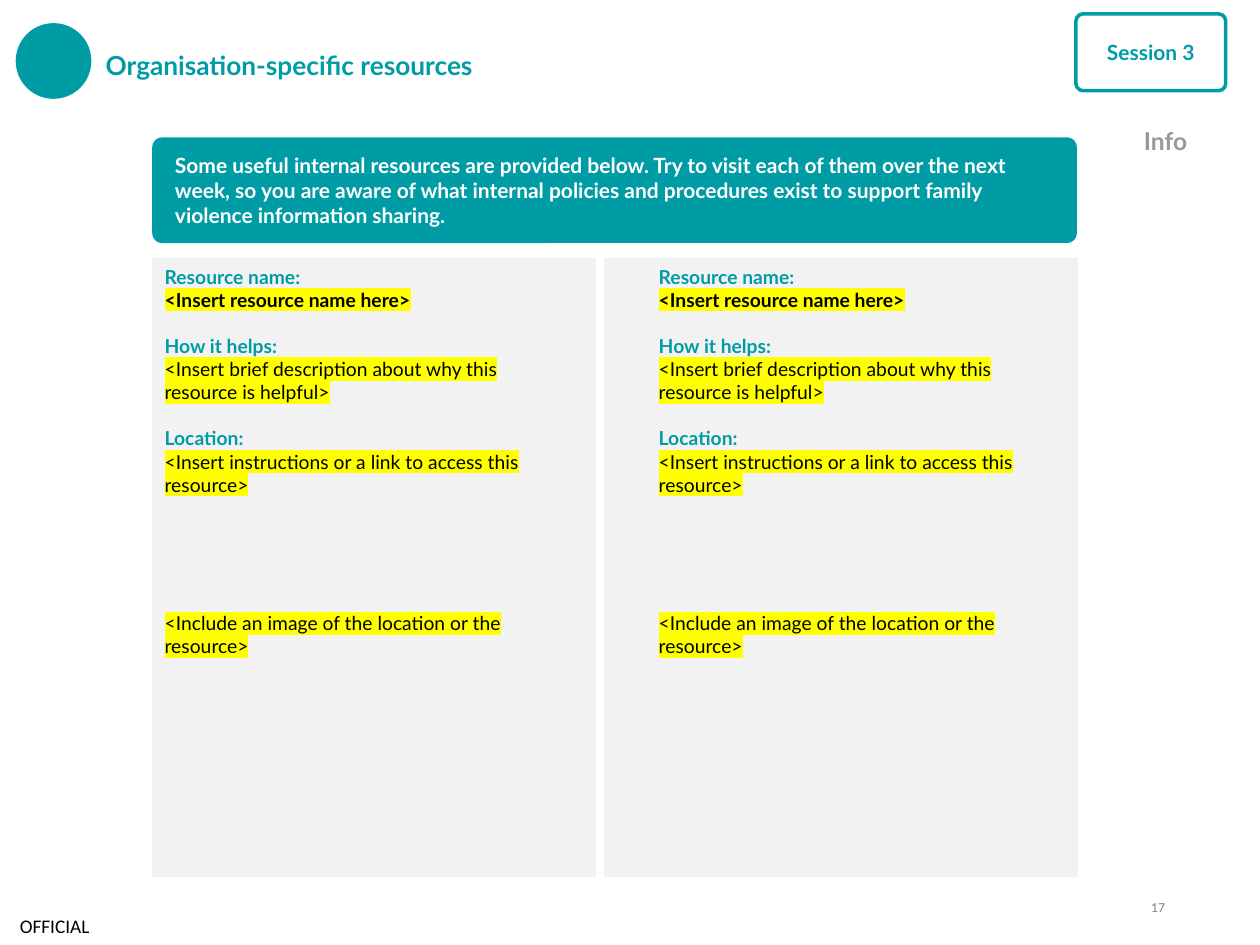
from lxml.etree import SubElement
from pptx import Presentation
from pptx.dml.color import RGBColor
from pptx.enum.shapes import MSO_SHAPE as Form
from pptx.enum.text import MSO_ANCHOR as Anchor, PP_ALIGN as Align
from pptx.oxml.ns import qn
from pptx.util import Cm, Pt

TEAL, PALE, WHITE, BLACK, YELLOW = "009CA6", "F2F2F2", "FFFFFF", "000000", "FFFF00"
PARTS = [  # text, is label, space before in points
    ("Resource name:", True, 0),
    ("<Insert resource name here>", False, 0),
    ("How it helps:", True, 13.2),
    ("<Insert brief description about why this resource is helpful>", False, 0),
    ("Location:", True, 13.2),
    ("<Insert instructions or a link to access this resource>", False, 0),
    ("<Include an image of the location or the resource>", False, 66),
]


def color(code):
    return RGBColor.from_string(code)


def place(box):
    return [Cm(n) for n in box]


def add_run(para, text, size, code, bold=False, mark=None, face="Lato"):
    run = para.add_run()
    run.text = text
    font = run.font
    font.size, font.bold = Pt(size), bold
    font.color.rgb = color(code)
    if mark:
        light = SubElement(run._r.get_or_add_rPr(), qn("a:highlight"))
        SubElement(light, qn("a:srgbClr")).set("val", mark)
    font.name = face


def set_frame(shape, side=0.25, edge=0.13, anchor=Anchor.TOP):
    frame = shape.text_frame
    frame.word_wrap = True
    frame.vertical_anchor = anchor
    frame.margin_left = frame.margin_right = Cm(side)
    frame.margin_top = frame.margin_bottom = Cm(edge)
    return frame


def add_form(slide, form, box, fill, line=None, width=0.75):
    shape = slide.shapes.add_shape(form, *place(box))
    shape.shadow.inherit = False
    shape.fill.solid()
    shape.fill.fore_color.rgb = color(fill)
    if line:
        shape.line.color.rgb = color(line)
        shape.line.width = Pt(width)
    else:
        shape.line.fill.background()
    if form == Form.ROUNDED_RECTANGLE:
        shape.adjustments[0] = 0.094
    return shape


def add_label(slide, box, text, size, code, align=Align.LEFT, bold=False,
              face="Lato", **frame):
    shape = slide.shapes.add_textbox(*place(box))
    para = set_frame(shape, **frame).paragraphs[0]
    para.alignment = align
    add_run(para, text, size, code, bold, face=face)


def add_head(slide, left, top):
    add_form(slide, Form.OVAL, (left, top, 1.5, 1.5), TEAL, TEAL)
    title = slide.shapes.title
    title.left, title.top, title.width, title.height = place(
        (left + 1.8, top, 18.06, 1.65))
    para = set_frame(title, 0, 0, Anchor.MIDDLE).paragraphs[0]
    para.alignment = Align.LEFT
    para.space_after = Pt(3.4)
    add_run(para, "Organisation-specific resources", 15, TEAL, True)


def add_badge(slide, left, top):
    shape = add_form(slide, Form.ROUNDED_RECTANGLE, (left, top, 3.02, 1.55),
                     WHITE, TEAL, 2)
    para = set_frame(shape, 0.5, anchor=Anchor.MIDDLE).paragraphs[0]
    para.alignment = Align.CENTER
    para.space_after = Pt(6)
    add_run(para, "Session 3", 12, TEAL, True)
    add_label(slide, (left + 1.12, top + 2.13, 2.4, 0.86), "Info", 14,
              "96999E", bold=True)


def add_intro(slide, box):
    shape = add_form(slide, Form.ROUNDED_RECTANGLE, box, TEAL)
    para = set_frame(shape, 0.4, anchor=Anchor.MIDDLE).paragraphs[0]
    para.alignment = Align.LEFT
    add_run(para, "Some useful internal resources are provided below. Try to "
            "visit each of them over the next week, so you are aware of what "
            "internal policies and procedures exist to support family "
            "violence information sharing.", 12, WHITE, True)


def add_card(slide, box, shift, width):
    """Panel with its resource text, which starts shift cm from its left."""
    left, top, _, height = box
    add_form(slide, Form.RECTANGLE, box, PALE, PALE)
    text = slide.shapes.add_textbox(*place((left + shift, top, width, height)))
    frame = set_frame(text)
    for i, (words, label, gap) in enumerate(PARTS):
        para = frame.add_paragraph() if i else frame.paragraphs[0]
        if gap:
            para.space_before = Pt(gap)
        if label:
            add_run(para, words, 11, TEAL, True)
        else:
            add_run(para, words, 11, BLACK, i == 1, YELLOW)


def add_foot(slide, top):
    add_label(slide, (0, top + 0.12, 2.4, 0.79), "OFFICIAL", 11, BLACK,
              face="Calibri", side=0.4, edge=0, anchor=Anchor.MIDDLE)
    add_label(slide, (22.63, top, 0.86, 0.51), "17", 7, "7F7F7F",
              Align.RIGHT, side=0, edge=0)


def main():
    deck = Presentation()
    deck.slide_width, deck.slide_height = Cm(25.4), Cm(19.05)
    slide = deck.slides.add_slide(deck.slide_layouts[5])
    add_head(slide, 0.33, 0.48)
    add_badge(slide, 21.69, 0.28)
    add_intro(slide, (3.07, 2.77, 18.64, 2.13))
    add_card(slide, (3.07, 5.21, 8.94, 12.45), 0, 8.26)
    add_card(slide, (12.19, 5.21, 9.53, 12.45), 0.84, 8.66)
    add_foot(slide, 18.14)
    deck.save("out.pptx")


if __name__ == "__main__":
    main()
